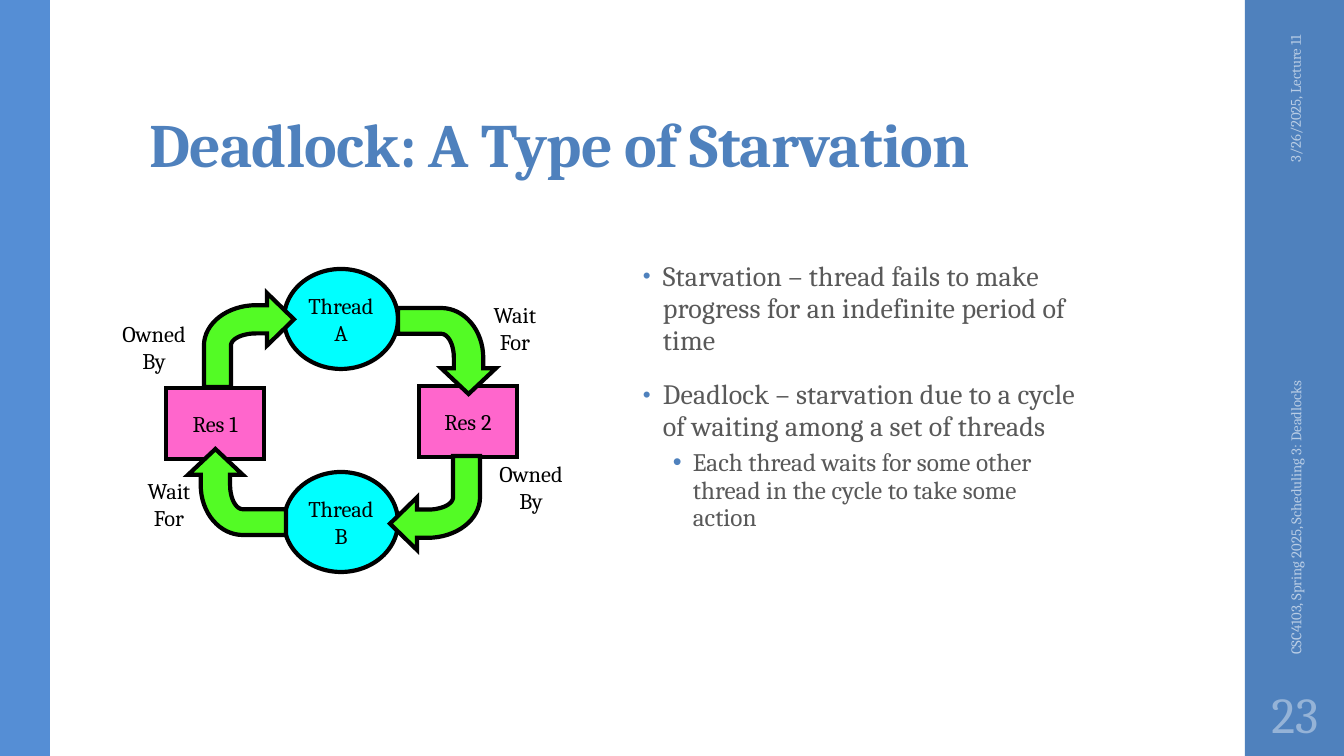
"""Builds a slide showing deadlock as a cycle of threads and resources."""
from dataclasses import dataclass
from math import cos, pi, sin

from lxml.etree import SubElement
from pptx import Presentation
from pptx.dml.color import RGBColor
from pptx.enum.shapes import MSO_SHAPE as Preset
from pptx.enum.text import MSO_ANCHOR as Anchor, MSO_AUTO_SIZE as AutoSize, PP_ALIGN as Align
from pptx.oxml.ns import qn
from pptx.util import Inches, Pt

PX = Inches(1) / 100.8


@dataclass(frozen=True)
class Theme:
    font: str = "Cambria"
    accent: str = "4F81BD"
    edge: str = "558ED5"
    body: str = "595959"
    footer: str = "B9CDE5"
    number: str = "95B3D7"
    ink: str = "000000"
    resource: str = "FF66CC"
    thread: str = "00FFFF"
    arrow: str = "53FB25"
    title_size: float = 44
    number_size: float = 36
    point_size: float = 20
    detail_size: float = 18
    label_size: float = 16
    footer_size: float = 10.5
    outline: float = 3


def emu(px):
    return round(px * PX)


def apply(target, values):
    for name, value in values.items():
        setattr(target, name, value)


def place(shape, box):
    apply(shape, dict(zip(("left", "top", "width", "height"), map(emu, box))))


def arc(radius_x, radius_y, backward=False, steps=16):
    angles = [pi / 2 * step / steps for step in range(steps + 1)]
    points = [(0.58 - radius_x * sin(a), 0.56 - radius_y * cos(a)) for a in angles]
    return points[::-1] if backward else points


def bent_arrow_outline():
    return [(1, 0.28), (0.7, 0), (0.7, 0.13), *arc(0.58, 0.43),
            (0, 1), (0.3, 1), *arc(0.28, 0.13, backward=True),
            (0.7, 0.43), (0.7, 0.56)]


class SlideBuilder:
    def __init__(self, theme):
        self.theme = theme
        self.deck = Presentation()
        apply(self.deck, {"slide_width": emu(1344), "slide_height": emu(756)})
        self.page = self.deck.slides.add_slide(self.deck.slide_layouts[5])

    def paint(self, shape, fill, outlined=True):
        shape.shadow.inherit = False
        shape.fill.solid()
        shape.fill.fore_color.rgb = RGBColor.from_string(fill)
        if not outlined:
            shape.line.fill.background()
            return
        shape.line.color.rgb = RGBColor.from_string(self.theme.ink)
        shape.line.width = Pt(self.theme.outline)
        outline = shape._element.spPr.find(qn("a:ln"))
        SubElement(outline, qn("a:miter"), lim="800000")

    def style(self, para, size, color, bold=False, tracking=0):
        for span in para.runs:
            apply(span.font, {"name": self.theme.font, "size": Pt(size), "bold": bold})
            span.font.color.rgb = RGBColor.from_string(color)
            if tracking:
                span._r.get_or_add_rPr().set("spc", str(tracking))

    def set_text(self, shape, text, size, color, align=Align.CENTER, **frame_format):
        frame = shape.text_frame
        frame.text = text
        apply(frame, {"word_wrap": False, "vertical_anchor": Anchor.MIDDLE, **frame_format})
        for para in frame.paragraphs:
            para.alignment = align
            self.style(para, size, color)

    def title(self, box, text):
        shape = self.page.shapes.title
        place(shape, box)
        self.set_text(shape, text, self.theme.title_size, self.theme.accent, Align.LEFT,
                      word_wrap=True, vertical_anchor=Anchor.BOTTOM, auto_size=AutoSize.NONE,
                      margin_left=emu(10), margin_right=emu(10),
                      margin_top=emu(3), margin_bottom=emu(5))
        para = shape.text_frame.paragraphs[0]
        para.line_spacing = 0.9
        self.style(para, self.theme.title_size, self.theme.accent, bold=True, tracking=-50)

    def bar(self, box, fill):
        shape = self.page.shapes.add_shape(Preset.RECTANGLE, *map(emu, box))
        self.paint(shape, fill, outlined=False)

    def node(self, preset, box, text, fill):
        shape = self.page.shapes.add_shape(preset, *map(emu, box))
        self.paint(shape, fill)
        self.set_text(shape, text, self.theme.label_size, self.theme.ink)

    def bent_arrow(self, box, turn):
        left, top, width, height = box
        points = [(emu(left + x * width), emu(top + y * height)) for x, y in bent_arrow_outline()]
        builder = self.page.shapes.build_freeform(*points[0])
        builder.add_line_segments(points[1:], close=True)
        shape = builder.convert_to_shape()
        shape.rotation = turn
        self.paint(shape, self.theme.arrow)

    def label(self, box, text, size, color, align=Align.CENTER, turn=0, **frame_format):
        shape = self.page.shapes.add_textbox(*map(emu, box))
        shape.rotation = turn
        self.set_text(shape, text, size, color, align, **frame_format)

    def bullets(self, box, items):
        theme = self.theme
        levels = [
            (20, theme.point_size, 10, 80,
             {"line_spacing": 0.95, "space_before": Pt(14), "space_after": Pt(2)}),
            (50, theme.detail_size, 0, 100,
             {"line_spacing": 0.9, "space_before": Pt(3), "space_after": Pt(3)}),
        ]
        frame = self.page.shapes.add_textbox(*map(emu, box)).text_frame
        frame.word_wrap = True
        frame.text = "\n".join(text for _, text in items)
        for para, (level, _) in zip(frame.paragraphs, items):
            indent, size, tracking, bullet_size, spacing = levels[level]
            apply(para, {"level": level, **spacing})
            self.style(para, size, theme.body, tracking=tracking)
            props = para._p.get_or_add_pPr()
            props.set("marL", str(emu(indent)))
            props.set("indent", str(emu(-20)))
            color = SubElement(props, qn("a:buClr"))
            SubElement(color, qn("a:srgbClr"), val=theme.accent)
            SubElement(props, qn("a:buSzPct"), val=str(bullet_size * 1000))
            SubElement(props, qn("a:buFont"), typeface="Arial")
            SubElement(props, qn("a:buChar"), char="•")


def main():
    theme = Theme()
    slide = SlideBuilder(theme)
    slide.bar((1245, 0, 100, 756), theme.accent)
    slide.bar((0, 0, 50, 756), theme.edge)
    slide.title((139, 32, 1068, 154), "Deadlock: A Type of Starvation")
    slide.bullets((633, 256, 454, 426), [
        (0, "Starvation – thread fails to make progress for an indefinite period of time"),
        (0, "Deadlock – starvation due to a cycle of waiting among a set of threads"),
        (1, "Each thread waits for some other thread in the cycle to take some action"),
    ])

    slide.label((1190, 110, 210, 40), "3/26/2025, Lecture 11",
                theme.footer_size, theme.footer, Align.RIGHT, 270, word_wrap=True)
    slide.label((1098, 447, 395, 40), "CSC4103, Spring 2025, Scheduling 3: Deadlocks",
                theme.footer_size, theme.footer, Align.LEFT, 270, word_wrap=True)
    slide.label((1245, 680, 100, 66), "23", theme.number_size, theme.number)

    for left, top, text in [(419, 386, "Res 2"), (166, 388, "Res 1")]:
        slide.node(Preset.RECTANGLE, (left, top, 98, 71), text, theme.resource)
    for top, text in [(472, "Thread\nB"), (269, "Thread\nA")]:
        slide.node(Preset.OVAL, (284, top, 114, 100), text, theme.thread)

    arrow_boxes = [(204, 293, 90, 94), (404, 302, 86, 98),
                   (390, 456, 90, 94), (194, 443, 86, 98)]
    for quarter, box in enumerate(arrow_boxes):
        slide.bent_arrow(box, 90 * quarter)

    for left, top, width, text in [(480, 296, 70, "Wait\nFor"), (134, 472, 70, "Wait\nFor"),
                                   (484, 455, 94, "Owned\nBy"), (107, 315, 94, "Owned\nBy")]:
        slide.label((left, top, width, 65), text, theme.label_size, theme.ink,
                    vertical_anchor=Anchor.TOP)
    slide.deck.save("out.pptx")


if __name__ == "__main__":
    main()
